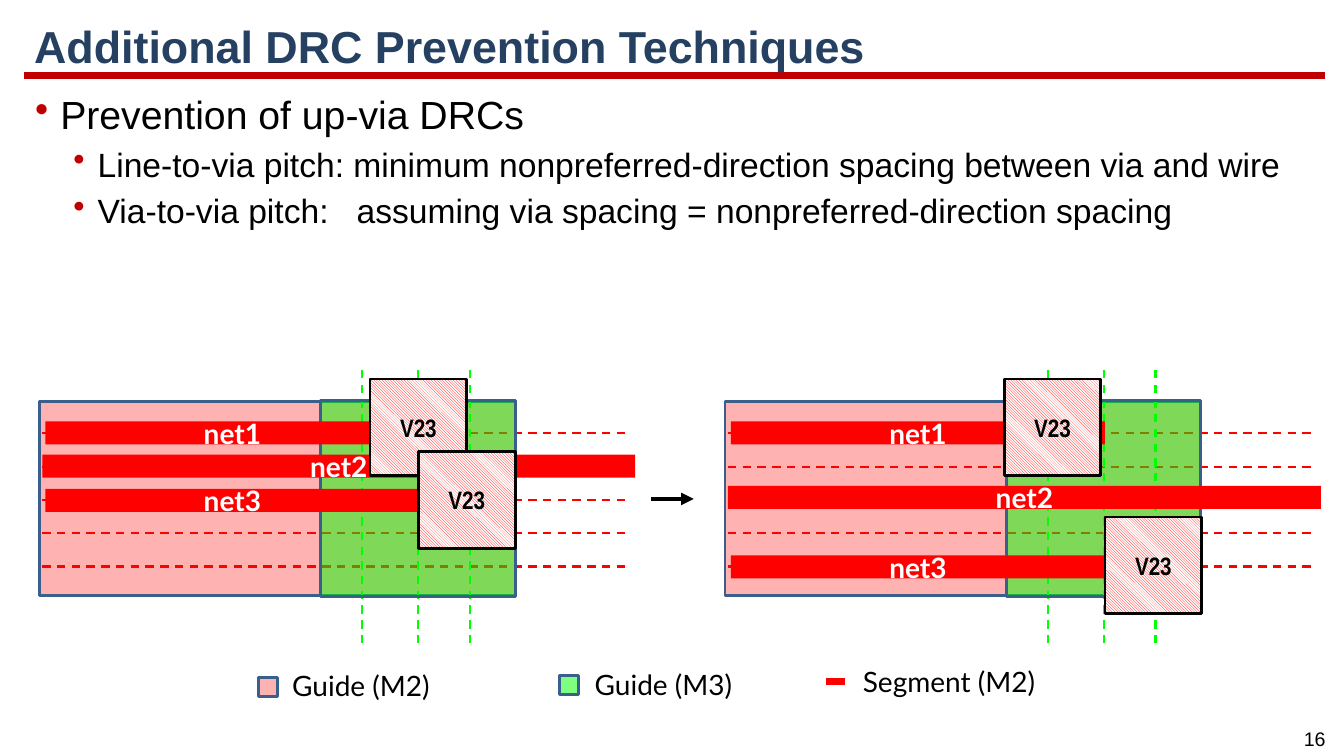
from dataclasses import dataclass

from lxml import etree
from pptx import Presentation
from pptx.dml.color import RGBColor
from pptx.enum.dml import MSO_LINE, MSO_PATTERN
from pptx.enum.shapes import MSO_CONNECTOR, MSO_SHAPE
from pptx.enum.text import MSO_ANCHOR, PP_ALIGN
from pptx.oxml.ns import qn
from pptx.util import Pt

PX = 9144
STRAIGHT = MSO_CONNECTOR.STRAIGHT
RECTANGLE = MSO_SHAPE.RECTANGLE
DASH = MSO_LINE.DASH
SHORT_DASH = MSO_LINE.SQUARE_DOT
HATCH = MSO_PATTERN.LIGHT_DOWNWARD_DIAGONAL
LEFT, CENTER = PP_ALIGN.LEFT, PP_ALIGN.CENTER
TOP, MIDDLE = MSO_ANCHOR.TOP, MSO_ANCHOR.MIDDLE


@dataclass(frozen=True)
class Theme:
    accent: str = "C00000"
    title: str = "254061"
    text: str = "000000"
    inverse: str = "FFFFFF"
    metal2: str = "FF0000"
    metal3: str = "00FF00"
    outline: str = "3A5F8C"
    body_font: str = "Arial"
    label_font: str = "Lato"
    via_font: str = "Arial Narrow"
    title_size: int = 32
    bullet_sizes: tuple = (28, 24)
    label_size: int = 20
    via_size: int = 18
    number_size: int = 14


class RoutingSlide:
    """Draws the elements of a routing slide, with lengths in px of 1/100 inch."""

    def __init__(self, slide, theme):
        self.slide = slide
        self.theme = theme
        self.shapes = slide.shapes

    def start_group(self):
        self.shapes = self.slide.shapes.add_group_shape().shapes

    def end_group(self):
        self.shapes = self.slide.shapes

    def style(self, paragraph, size, color, font, bold=False, align=LEFT):
        paragraph.alignment = align
        paragraph.font.size = Pt(size)
        paragraph.font.color.rgb = RGBColor.from_string(color)
        paragraph.font.name = font
        paragraph.font.bold = bold

    def text_box(self, left, top, width, height, anchor=TOP, wrap=True):
        box = self.shapes.add_textbox(left * PX, top * PX, width * PX, height * PX)
        frame = box.text_frame
        frame.word_wrap = wrap
        frame.vertical_anchor = anchor
        return frame

    def title(self, text):
        frame = self.text_box(24, 16, 1291, 65, MIDDLE)
        paragraph = frame.paragraphs[0]
        paragraph.text = text
        paragraph.line_spacing = 0.9
        self.style(paragraph, self.theme.title_size, self.theme.title,
                   self.theme.body_font, True)

    def bullets(self, items):
        frame = self.text_box(25, 92, 1288, 608)
        for index, (level, text) in enumerate(items):
            paragraph = frame.add_paragraph() if index else frame.paragraphs[0]
            paragraph.text = text
            paragraph.level = level
            paragraph.line_spacing = 0.85
            paragraph.space_before = Pt(8.6)
            self.style(paragraph, self.theme.bullet_sizes[level], self.theme.text,
                       self.theme.body_font)
            margin, indent = ((25, -25), (62, -24))[level]
            properties = paragraph._p.get_or_add_pPr()
            properties.set("marL", str(margin * PX))
            properties.set("indent", str(indent * PX))
            color = etree.Element(qn("a:buClr"))
            etree.SubElement(color, qn("a:srgbClr"), val=self.theme.accent)
            bullet = etree.Element(qn("a:buChar"), char="•")
            default_run = properties.find(qn("a:defRPr"))
            default_run.addprevious(color)
            default_run.addprevious(bullet)

    def label(self, left, top, width, text):
        paragraph = self.text_box(left, top, width, 44).paragraphs[0]
        paragraph.text = text
        self.style(paragraph, self.theme.label_size, self.theme.text,
                   self.theme.label_font)

    def slide_number(self, text):
        paragraph = self.text_box(1282, 716, 44, 34, wrap=False).paragraphs[0]
        paragraph.text = text
        self.style(paragraph, self.theme.number_size, self.theme.text,
                   self.theme.body_font, align=CENTER)

    def line(self, start, end, color, weight, dash=None, arrow=False):
        connector = self.shapes.add_connector(
            STRAIGHT, *(value * PX for value in (*start, *end)))
        connector.line.color.rgb = RGBColor.from_string(color)
        connector.line.width = Pt(weight)
        if dash:
            connector.line.dash_style = dash
        properties = connector._element.spPr
        if arrow:
            etree.SubElement(properties.find(qn("a:ln")), qn("a:tailEnd"),
                             type="triangle")
        etree.SubElement(properties, qn("a:effectLst"))

    def rectangle(self, left, top, width, height, outline=None):
        shape = self.shapes.add_shape(
            RECTANGLE, left * PX, top * PX, width * PX, height * PX)
        shape.shadow.inherit = False
        if outline:
            shape.line.color.rgb = RGBColor.from_string(outline)
            shape.line.width = Pt(2)
        else:
            shape.line.fill.background()
        return shape

    def caption(self, shape, text, size, color, font, wrap=True):
        frame = shape.text_frame
        frame.word_wrap = wrap
        frame.vertical_anchor = MIDDLE
        paragraph = frame.paragraphs[0]
        paragraph.text = text
        self.style(paragraph, size, color, font, True, CENTER)

    def guide(self, left, top, width, height, color, opacity):
        shape = self.rectangle(left, top, width, height, self.theme.outline)
        shape.fill.solid()
        shape.fill.fore_color.rgb = RGBColor.from_string(color)
        color_element = shape._element.spPr.find(qn("a:solidFill"))[0]
        etree.SubElement(color_element, qn("a:alpha"), val=str(opacity * 1000))

    def segment(self, left, top, width, text):
        shape = self.rectangle(left, top, width, 23)
        shape.fill.solid()
        shape.fill.fore_color.rgb = RGBColor.from_string(self.theme.metal2)
        self.caption(shape, text, self.theme.label_size, self.theme.inverse,
                     self.theme.label_font)

    def via(self, left, top):
        shape = self.rectangle(left, top, 96, 96, self.theme.text)
        shape.fill.patterned()
        shape.fill.pattern = HATCH
        shape.fill.fore_color.rgb = RGBColor.from_string(self.theme.metal2)
        shape.fill.back_color.rgb = RGBColor.from_string(self.theme.inverse)
        self.caption(shape, "V23", self.theme.via_size, self.theme.text,
                     self.theme.via_font, False)

    def routing_panel(self, origin, net_tops, via_places):
        theme = self.theme
        self.start_group()
        self.guide(origin + 39, 398, 472, 193, theme.metal2, 30)
        for track in range(5):
            y = 430 + 33 * track
            self.line((origin + 42, y), (origin + 624, y), theme.metal2, 1.5, DASH)
        for x in (466, 415, 359):
            self.line((origin + x, 367), (origin + x, 639), theme.metal3, 1.5, DASH)
        self.guide(origin + 318, 397, 193, 195, theme.metal3, 50)
        first_via, second_via = via_places
        self.segment(origin + 45, net_tops[0], 371, "net1")
        self.segment(origin + 42, net_tops[1], 588, "net2")
        self.via(origin + first_via[0], first_via[1])
        self.segment(origin + 45, net_tops[2], 371, "net3")
        self.via(origin + second_via[0], second_via[1])
        self.end_group()

    def legend(self):
        theme = self.theme
        self.guide(256, 672, 19, 19, theme.metal2, 30)
        self.guide(555, 670, 19, 19, theme.metal3, 50)
        self.line((819, 676), (839, 676), theme.metal2, 4.5, SHORT_DASH)
        self.label(280, 658, 174, "Guide (M2)")
        self.label(580, 657, 173, "Guide (M3)")
        self.label(846, 654, 207, "Segment (M2)")


def main():
    presentation = Presentation()
    presentation.slide_width = 1333 * PX
    presentation.slide_height = 750 * PX
    theme = Theme()
    page = RoutingSlide(
        presentation.slides.add_slide(presentation.slide_layouts[6]), theme)
    page.line((24, 75), (1314, 75), theme.accent, 4.5)
    page.slide_number("16")
    page.bullets([
        (0, "Prevention of up-via DRCs"),
        (1, "Line-to-via pitch: minimum nonpreferred-direction spacing between via and wire"),
        (1, "Via-to-via pitch:   assuming via spacing = nonpreferred-direction spacing"),
    ])
    page.title("Additional DRC Prevention Techniques")
    page.legend()
    page.routing_panel(0, (418, 451, 485), ((367, 376), (415, 448)))
    page.routing_panel(680, (418, 482, 551), ((316, 376), (416, 513)))
    page.line((646, 495), (688, 495), theme.text, 3, arrow=True)
    presentation.save("out.pptx")


if __name__ == "__main__":
    main()
